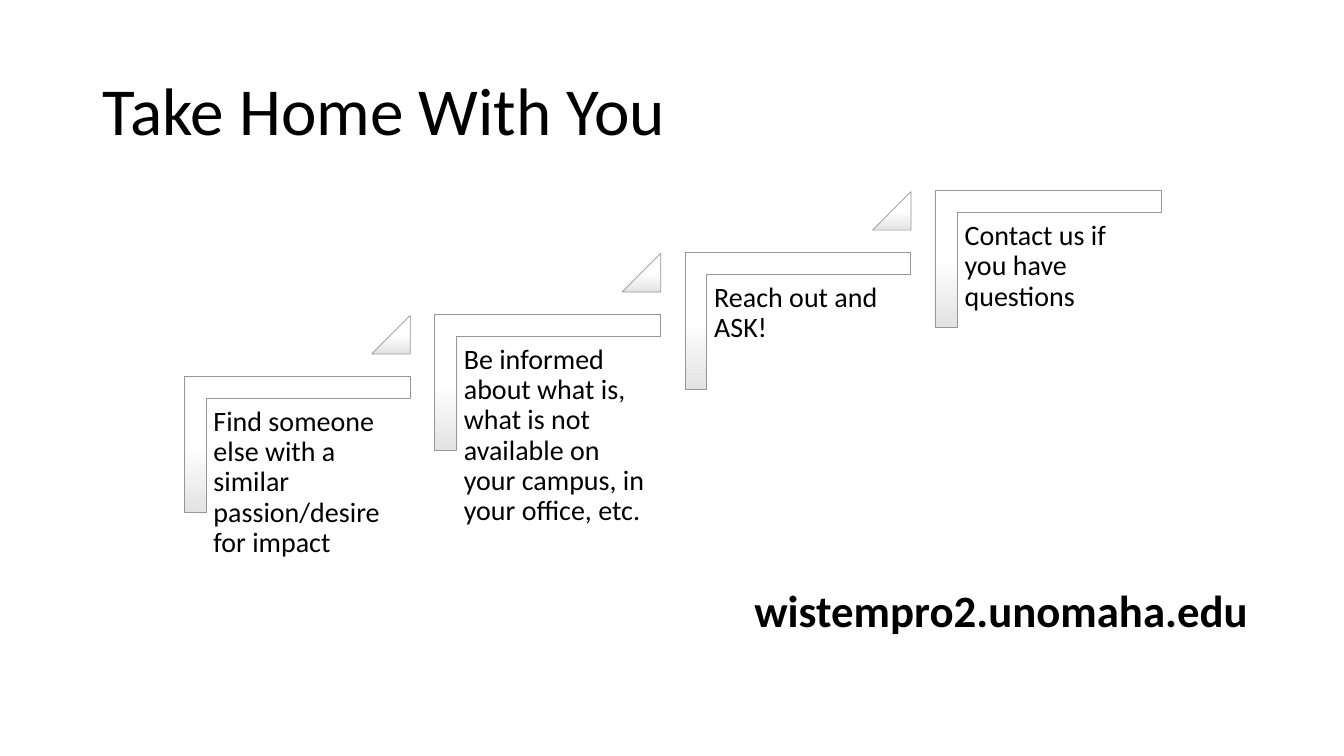
from pptx import Presentation
from pptx.dml.color import RGBColor
from pptx.enum.shapes import MSO_SHAPE
from pptx.enum.text import MSO_ANCHOR, PP_ALIGN
from pptx.oxml.ns import qn
from pptx.util import Cm, Pt

CORNER = MSO_SHAPE.CORNER
TRIANGLE = MSO_SHAPE.ISOSCELES_TRIANGLE
TOP, MIDDLE = MSO_ANCHOR.TOP, MSO_ANCHOR.MIDDLE
LEFT, CENTER = PP_ALIGN.LEFT, PP_ALIGN.CENTER

TITLE = "Take Home With You"
STEPS = [
    "Find someone else with a similar passion/desire for impact",
    "Be informed about what is, what is not available on your campus, in your office, etc.",
    "Reach out and ASK!",
    "Contact us if you have questions",
]
WEBSITE = "wistempro2.unomaha.edu"

FONT = "Calibri"
BLACK, WHITE, PALE, GREY = "000000", "FFFFFF", "E3E3E3", "969696"

# Places on the first step, in cm: left, top, width, height
CORNER_BOX = (5.77, 8.36, 3.43, 5.69)
LABEL_BOX = (5.18, 10.06, 5.16, 4.52)
TRIANGLE_BOX = (9.37, 7.95, 0.97, 0.97)
STEP_X, STEP_Y = 6.31, -1.56


def rgb(color):
    return RGBColor.from_string(color)


def on_step(box, i):
    """Move a first-step box to step i of the staircase."""
    x, y, w, h = box
    return x + i * STEP_X, y + i * STEP_Y, w, h


def add_text(slide, box, text, size, bold=False, align=LEFT, anchor=TOP,
             spacing=0.9, inset=(0.25, 0.13)):
    tf = slide.shapes.add_textbox(*map(Cm, box)).text_frame
    tf.word_wrap = True
    tf.vertical_anchor = anchor
    tf.margin_left = tf.margin_right = Cm(inset[0])
    tf.margin_top = tf.margin_bottom = Cm(inset[1])
    p = tf.paragraphs[0]
    p.alignment = align
    p.line_spacing = spacing
    r = p.add_run()
    r.text = text
    r.font.name = FONT
    r.font.size = Pt(size)
    r.font.bold = bold
    r.font.color.rgb = rgb(BLACK)


def add_shaded(slide, kind, box, adjustments, rotation=0):
    """Add a grey-edged shape that fades from white to pale grey downwards."""
    sp = slide.shapes.add_shape(kind, *map(Cm, box))
    sp.shadow.inherit = False
    sp.rotation = rotation
    for i, value in enumerate(adjustments):
        sp.adjustments[i] = value
    sp.fill.gradient()
    sp.fill.gradient_angle = 270
    for stop, position, color in zip(sp.fill.gradient_stops, (0.5, 1), (WHITE, PALE)):
        stop.position = position
        stop.color.rgb = rgb(color)
    # Keep the shading vertical when the shape is turned
    sp._element.spPr.find(qn("a:gradFill")).set("rotWithShape", "0")
    sp.line.color.rgb = rgb(GREY)
    sp.line.width = Pt(0.5)


def main():
    prs = Presentation()
    prs.slide_width, prs.slide_height = Cm(33.87), Cm(19.05)
    slide = prs.slides.add_slide(prs.slide_layouts[6])

    add_text(slide, (2.34, 1.02, 29.21, 3.68), TITLE, 48, anchor=MIDDLE)
    for i, step in enumerate(STEPS):
        add_shaded(slide, CORNER, on_step(CORNER_BOX, i), (0.161, 0.161), 90)
        add_text(slide, on_step(LABEL_BOX, i), step, 20, inset=(0.2, 0.2))
        if i < len(STEPS) - 1:
            add_shaded(slide, TRIANGLE, on_step(TRIANGLE_BOX, i), (1,))
    add_text(slide, (17.55, 14.55, 15.37, 1.63), WEBSITE, 32, bold=True,
             align=CENTER, spacing=1.0)

    prs.save("out.pptx")


if __name__ == "__main__":
    main()
